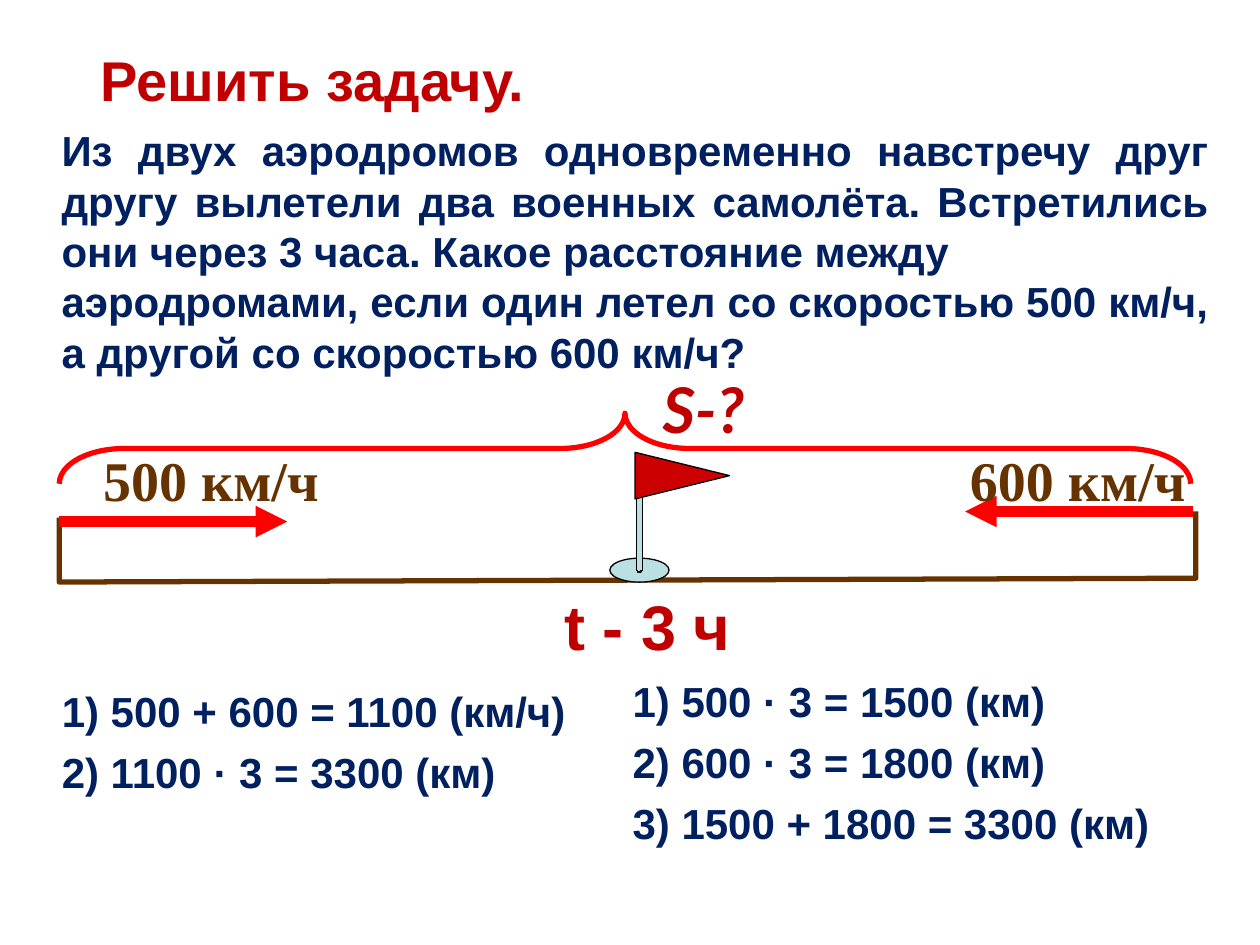
import pptx
import pptx.util
import pptx.dml.color
from pptx.enum.shapes import MSO_CONNECTOR, MSO_SHAPE
from pptx.enum.text import MSO_ANCHOR, MSO_AUTO_SIZE, PP_ALIGN
from pptx.oxml.ns import qn
from lxml import etree

Inches, Pt = pptx.util.Inches, pptx.util.Pt

# Content
RED, NAVY, BROWN, PALE = "C00000", "002060", "663300", "BBE0E3"
TITLE = "Решить задачу."
TASK = [
    "Из двух аэродромов одновременно навстречу друг другу вылетели два "
    "военных самолёта. Встретились они через 3 часа. Какое расстояние между",
    "аэродромами, если один летел со скоростью 500 км/ч, "
    "а другой со скоростью 600 км/ч?",
]
WAYS = [
    ((0.39, 5.39, 4.5, 0.97),
     ["1) 500 + 600 = 1100 (км/ч)", "2) 1100 · 3 = 3300 (км)"]),
    ((4.92, 5.31, 5.08, 1.46),
     ["1) 500 · 3 = 1500 (км)", "2) 600 · 3 = 1800 (км)",
      "3) 1500 + 1800 = 3300 (км)"]),
]
LABELS = [  # text, box, size, font, colour, italic
    ("t - 3 ч", (4.38, 4.61, 2.1, 0.71), 36, "Arial", RED, False),
    ("500 км/ч", (0.72, 3.49, 2.2, 0.64), 32, "Times New Roman", BROWN, False),
    ("600 км/ч", (7.6, 3.49, 2.06, 0.64), 32, "Times New Roman", BROWN, False),
    ("S-?", (5.16, 2.89, 1.02, 0.71), 36, "Lato", RED, True),
]
TRACK = [(0.47, 4.11), (0.47, 4.62), (9.49, 4.59), (9.49, 4.06)]
ARROWS = [(0.47, 2.28, 4.14), (9.47, 7.66, 4.06)]  # from x, to x, y
FLAG = [  # preset, box, turn, fill, adjustment
    (MSO_SHAPE.OVAL, (4.84, 4.43, 0.47, 0.19), 0, PALE, None),
    (MSO_SHAPE.CROSS, (5.05, 3.68, 0.05, 0.86), 0, PALE, 0.25),
    (MSO_SHAPE.ISOSCELES_TRIANGLE, (5.23, 3.4, 0.37, 0.75), 90, "CC0000", 0.5),
]


def color(code):
    return pptx.dml.color.RGBColor.from_string(code)


def stroke(line, code, width):
    line.color.rgb = color(code)
    line.width = Pt(width)


def place(shape, box):
    shape.left, shape.top, shape.width, shape.height = map(Inches, box)


def write(shape, lines, size, font, code, align=PP_ALIGN.LEFT, gap=0, italic=False):
    frame = shape.text_frame
    frame.text = "\n".join(lines)
    frame.word_wrap = True
    frame.auto_size = MSO_AUTO_SIZE.NONE
    frame.vertical_anchor = MSO_ANCHOR.TOP
    for i, para in enumerate(frame.paragraphs):
        para.alignment = align
        para.space_before = Pt(gap if i else 0)
        for run in para.runs:
            run.font.size, run.font.name = Pt(size), font
            run.font.bold, run.font.italic = True, italic
            run.font.color.rgb = color(code)


def add_text(box, *args, **more):
    write(slide.shapes.add_textbox(*map(Inches, box)), *args, **more)


def add_shape(kind, box, turn=0, fill=None):
    shape = slide.shapes.add_shape(kind, *map(Inches, box))
    shape.shadow.inherit = False
    shape.rotation = turn
    if fill:
        shape.fill.solid()
        shape.fill.fore_color.rgb = color(fill)
    else:
        shape.fill.background()
    return shape


deck = pptx.Presentation()
deck.slide_width, deck.slide_height = Inches(10), Inches(7.5)
slide = deck.slides.add_slide(deck.slide_layouts[3])
title, *bodies = slide.placeholders

# Title and task
place(title, (0.7, 0.31, 8.2, 0.64))
write(title, [TITLE], 32, "Arial", RED)
add_text((0.39, 0.94, 9.3, 2.12), TASK, 24, "Arial", NAVY, align=PP_ALIGN.JUSTIFY)

# Track between the airfields
pts = [(Inches(x), Inches(y)) for x, y in TRACK]
build = slide.shapes.build_freeform(*pts[0])
build.add_line_segments(pts[1:], close=False)
track = build.convert_to_shape()
track.shadow.inherit = False
track.fill.background()
stroke(track.line, BROWN, 3)

# Speed arrows
for start, end, y in ARROWS:
    arrow = slide.shapes.add_connector(
        MSO_CONNECTOR.STRAIGHT, Inches(start), Inches(y), Inches(end), Inches(y))
    stroke(arrow.line, "FF0000", 6)
    etree.SubElement(arrow.line._get_or_add_ln(), qn("a:tailEnd"), type="triangle")
    etree.SubElement(arrow._element.spPr, qn("a:effectLst"))

# Meeting flag
for kind, box, turn, fill, adj in FLAG:
    part = add_shape(kind, box, turn, fill)
    stroke(part.line, "000000", 0.75)
    if adj is not None:
        part.adjustments[0] = adj

# Distance brace
brace = add_shape(MSO_SHAPE.LEFT_BRACE, (4.68, -0.93, 0.56, 8.98), 90)
brace.adjustments[0] = 0.92
stroke(brace.line, "FF0000", 3)

# Labels
for text, box, size, font, code, italic in LABELS:
    add_text(box, [text], size, font, code, italic=italic)

# Two ways to solve
for body, (box, steps) in zip(bodies, WAYS):
    place(body, box)
    write(body, steps, 24, "Arial", NAVY, gap=6.2)
    for para in body.text_frame.paragraphs:
        props = para._p.get_or_add_pPr()
        props.set("marL", "0")
        props.set("indent", "0")
        etree.SubElement(props, qn("a:buNone"))
for extra in bodies[len(WAYS):]:
    extra._element.getparent().remove(extra._element)

deck.save("out.pptx")
